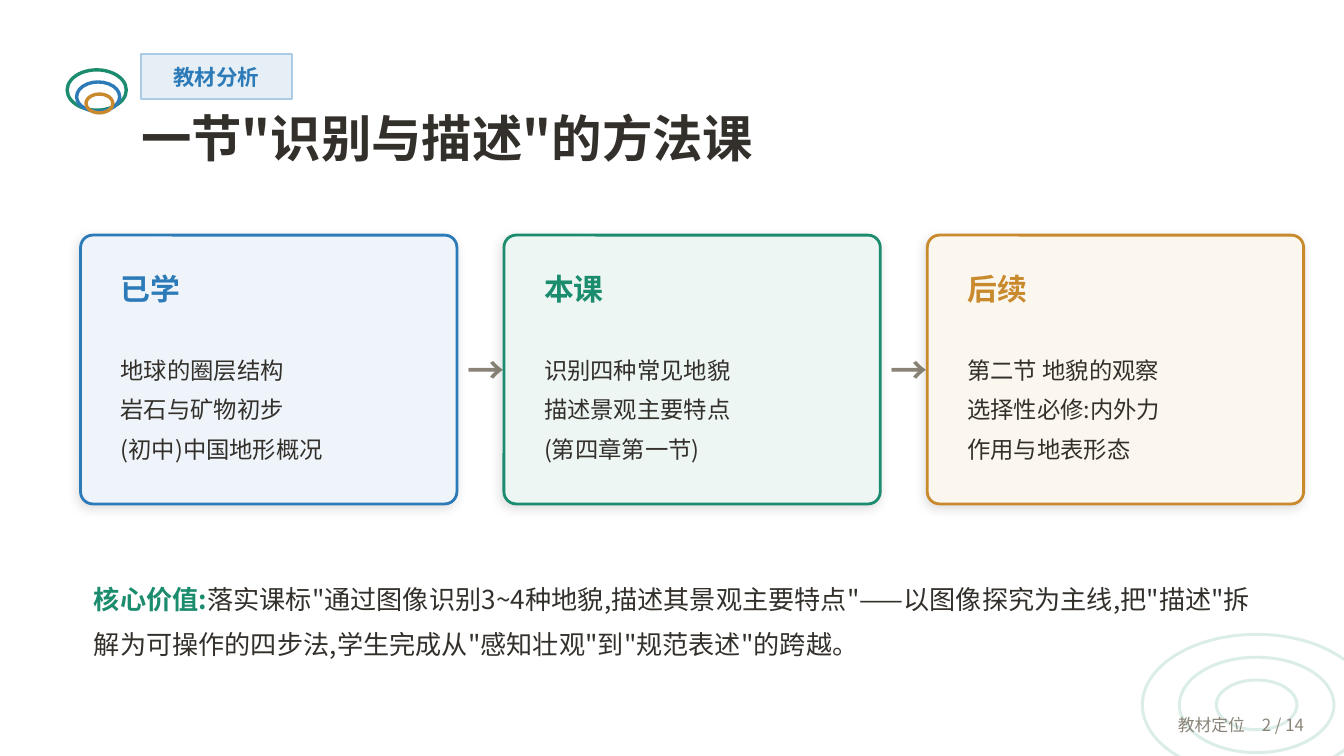
from dataclasses import dataclass

from lxml.etree import SubElement
from pptx import Presentation
from pptx.dml.color import RGBColor
from pptx.enum.shapes import MSO_SHAPE
from pptx.enum.text import MSO_ANCHOR, PP_ALIGN
from pptx.oxml.ns import qn
from pptx.util import Inches, Pt


@dataclass(frozen=True)
class Theme:
    font: str = "Noto Sans CJK SC"
    ink: str = "33302B"
    gray: str = "8A8478"
    blue: str = "2C7BB8"
    green: str = "1C8C6E"
    gold: str = "C98A2E"
    mist: str = "DBEDE8"
    tag_fill: str = "E6EFF6"
    tag_line: str = "ABCAE3"
    title: float = 27
    arrow: float = 20
    head: float = 16
    core: float = 14
    body: float = 12.5
    tag: float = 11.5
    foot: float = 9


theme = Theme()
deck = Presentation()
deck.slide_width = Inches(10)
deck.slide_height = deck.slide_width * 9 // 16
slide = deck.slides.add_slide(deck.slide_layouts[6])
unit = deck.slide_width / 100  # all places are in hundredths of the width


def draw(kind, box, line, width, fill=None):
    shape = slide.shapes.add_shape(kind, *[round(n * unit) for n in box])
    shape.shadow.inherit = False
    shape.line.color.rgb = RGBColor.from_string(line)
    shape.line.width = Pt(width)
    if fill:
        shape.fill.solid()
        shape.fill.fore_color.rgb = RGBColor.from_string(fill)
    else:
        shape.fill.background()
    return shape


def write(target, lines, size, color, bold=False, align=PP_ALIGN.LEFT,
          anchor=MSO_ANCHOR.MIDDLE, inset=None, pitch=None):
    """Fill a shape, or a new text box at a place; a line is a list of (text, color, bold) or a string."""
    if isinstance(target, tuple):
        target = slide.shapes.add_textbox(*[round(n * unit) for n in target])
    frame = target.text_frame
    frame.word_wrap = True
    frame.vertical_anchor = anchor
    if inset is not None:
        frame.margin_left = frame.margin_right = inset
        frame.margin_top = frame.margin_bottom = inset
    for i, line in enumerate(lines):
        para = frame.add_paragraph() if i else frame.paragraphs[0]
        para.alignment = align
        if pitch:
            para.line_spacing = Pt(pitch)
        font = para.font
        font.size, font.name, font.bold = Pt(size), theme.font, bold
        font.color.rgb = RGBColor.from_string(color)
        SubElement(font._element, qn("a:ea"), typeface=theme.font)
        if isinstance(line, str):
            para.add_run().text = line
            continue
        for text, tint, heavy in line:
            run = para.add_run()
            run.text, run.font.bold = text, heavy
            run.font.color.rgb = RGBColor.from_string(tint)


# Rings: corner mark and logo place
for i in range(3):
    draw(MSO_SHAPE.OVAL, (85 + 2.75 * i, 47.2 + 1.7 * i, 17 - 5.5 * i, 10.5 - 3.4 * i),
         theme.mist, 1.6)
for i, color in enumerate((theme.blue, theme.green, theme.gold)):
    color = (theme.green, theme.blue, theme.gold)[i]
    draw(MSO_SHAPE.OVAL, (5 + 0.7 * i, 5.2 + 0.9 * i, 4.4 - 1.2 * i, 3 - 0.8 * i),
         color, 1.8)

# Heading
tag = draw(MSO_SHAPE.RECTANGLE, (10.5, 4, 11.2, 3.4), theme.tag_line, 1, theme.tag_fill)
write(tag, ["教材分析"], theme.tag, theme.blue, True, PP_ALIGN.CENTER, inset=0)
write((10.5, 8, 84, 5.5), ['一节"识别与描述"的方法课'], theme.title, theme.ink, True,
      anchor=MSO_ANCHOR.TOP, inset=0)

# Cards
cards = [
    ("已学", theme.blue, "EEF4F9", ["地球的圈层结构", "岩石与矿物初步", "(初中)中国地形概况"]),
    ("本课", theme.green, "EDF6F3", ["识别四种常见地貌", "描述景观主要特点", "(第四章第一节)"]),
    ("后续", theme.gold, "FBF6EE", ["第二节 地貌的观察", "选择性必修:内外力", "作用与地表形态"]),
]
wide, gap, top = 28, 3.5, 17.5
for i, (head, color, fill, lines) in enumerate(cards):
    left = 6 + i * (wide + gap)
    card = draw(MSO_SHAPE.ROUNDED_RECTANGLE, (left, top, wide, 20), color, 1.5, fill)
    card.adjustments[0] = 0.045
    effects = card._element.spPr.find(qn("a:effectLst"))
    shade = SubElement(effects, qn("a:outerShdw"), blurRad=str(Pt(6)), dist=str(Pt(2)),
                       dir=str(135 * 60000), algn="bl", rotWithShape="0")
    black = SubElement(shade, qn("a:srgbClr"), val="000000")
    SubElement(black, qn("a:alpha"), val="12000")
    write((left + 2, top + 2, wide - 4, 4), [head], theme.head, color, True)
    write((left + 2, top + 6.3, wide - 4, 12.5), lines, theme.body, theme.ink, pitch=21)
    if i < len(cards) - 1:
        write((left + wide - 0.2, top + 8, 4, 4), ["→"], theme.arrow, theme.gray, True)

# Core value and footer
core = [
    ("核心价值:", theme.green, True),
    ('落实课标"通过图像识别3~4种地貌,描述其景观主要特点"——以图像探究为主线,'
     '把"描述"拆解为可操作的四步法,学生完成从"感知壮观"到"规范表述"的跨越。', theme.ink, False),
]
write((6, 41.5, 88.5, 8.5), [core], theme.core, theme.ink, pitch=24)
write((80, 52.4, 18, 3), ["教材定位　2 / 14"], theme.foot, theme.gray, align=PP_ALIGN.RIGHT)

deck.save("out.pptx")
